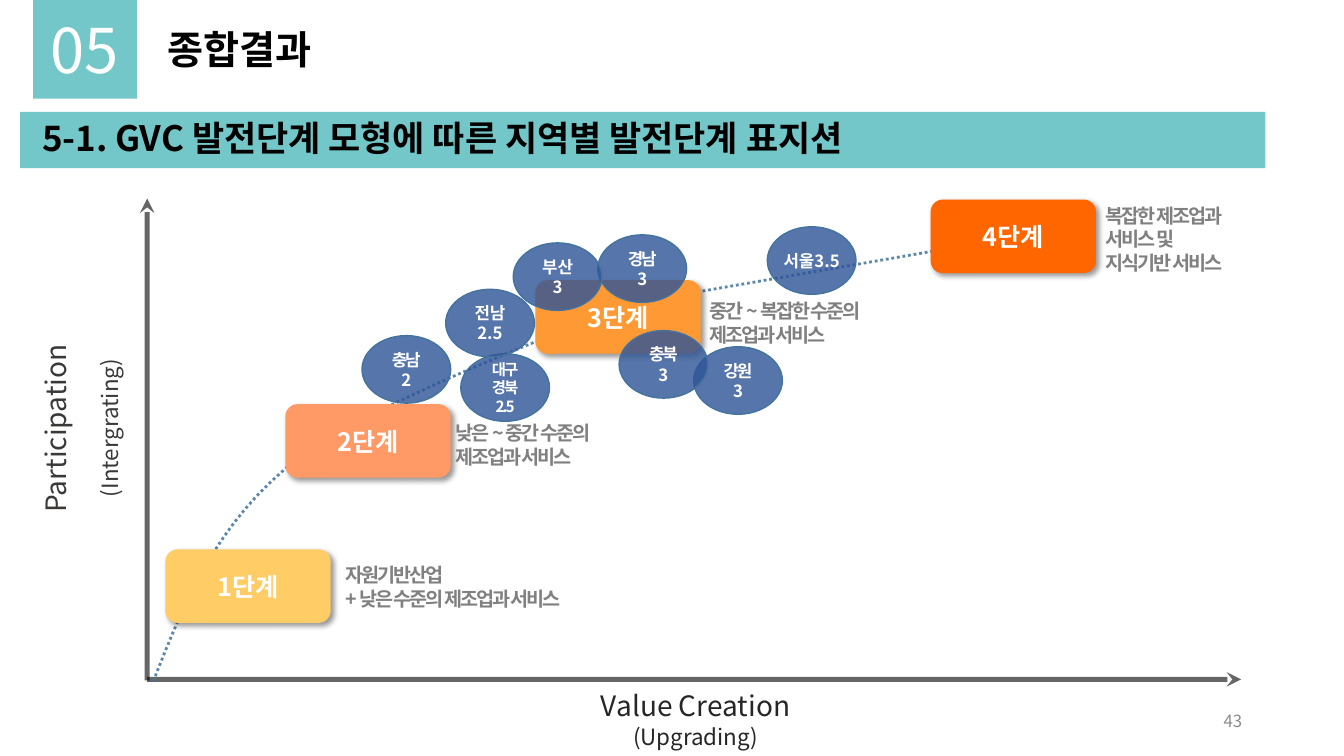
"""Build the slide that places regions on the GVC development stage curve."""
from lxml import etree
from pptx import Presentation
from pptx.dml.color import RGBColor
from pptx.enum.dml import MSO_LINE
from pptx.enum.shapes import MSO_CONNECTOR, MSO_SHAPE
from pptx.enum.text import MSO_ANCHOR, MSO_AUTO_SIZE, PP_ALIGN
from pptx.oxml.ns import qn
from pptx.util import Inches, Pt

RECT, ROUNDED, OVAL = MSO_SHAPE.RECTANGLE, MSO_SHAPE.ROUNDED_RECTANGLE, MSO_SHAPE.OVAL
STRAIGHT, DOTTED = MSO_CONNECTOR.STRAIGHT, MSO_LINE.ROUND_DOT
LEFT, CENTER, RIGHT = PP_ALIGN.LEFT, PP_ALIGN.CENTER, PP_ALIGN.RIGHT
TOP, MIDDLE = MSO_ANCHOR.TOP, MSO_ANCHOR.MIDDLE
FIT_SHAPE, FIXED = MSO_AUTO_SIZE.SHAPE_TO_FIT_TEXT, MSO_AUTO_SIZE.NONE
FONT = "Noto Sans CJK KR"
TEAL, WHITE, BLACK, GRAY = "74C7C9", "FFFFFF", "000000", "808080"
NAVY, BLUE, DARK, INK = "2F5597", "43739E", "3B3838", "262626"

AXES = [((1.46, 1.97), (1.46, 6.75)), ((12.31, 6.74), (1.46, 6.74))]
CURVE_START, CURVE_END = (1.52, 6.76), (9.9, 2.38)
CURVE_BENDS = [((1.83, 5.97), (2.14, 5.19), (2.94, 4.56)),
               ((3.74, 3.94), (6.32, 3), (6.32, 3))]
BEND_STEPS = 16
STAGE_SIZE = (1.64, 0.73)
STAGES = [("1단계", 1.64, 5.45, "FFCC66"), ("2단계", 2.83, 4.01, "FF9966"),
          ("3단계", 5.31, 2.78, "FF9933"), ("4단계", 9.23, 1.98, "FF6600")]
STAGE_NOTES = [
    (["자원기반산업", "+ 낮은 수준의 제조업과 서비스"], (3.33, 5.54, 4.79, 0.57)),
    (["낮은 ~ 중간 수준의", "제조업과 서비스"], (4.42, 4.13, 3.01, 0.57)),
    (["중간 ~ 복잡한 수준의", "제조업과 서비스"], (6.94, 2.92, 3.15, 0.57)),
    (["복잡한 제조업과", "서비스 및", "지식기반 서비스"], (10.87, 1.97, 2.48, 0.81)),
]
AXIS_LABELS = [
    ("Participation", (-2.35, 4.03, 5.8, 0.44), 20, DARK, 270),
    ("(Intergrating)", (-1.81, 4.06, 5.8, 0.37), 16, DARK, 270),
    ("Value Creation", (2.96, 6.78, 7.88, 0.44), 20, INK, 0),
    ("(Upgrading)", (2.96, 7.13, 7.88, 0.37), 16, INK, 0),
]
REGION_SIZE = (0.88, 0.67)
REGIONS = [
    (["서울3.5"], 7.61, 2.25, 12, 0),
    (["경남", "3"], 5.93, 2.33, 12, -1.5),
    (["충남", "2"], 3.59, 3.33, 12, -1.5),
    (["대구", "경북", "2.5"], 4.57, 3.51, 11, -1.5),
    (["부산", "3"], 5.09, 2.41, 12, 0),
    (["강원", "3"], 6.88, 3.44, 12, -1.5),
    (["충북", "3"], 6.14, 3.28, 12, -1.5),
    (["전남", "2.5"], 4.42, 2.87, 12, 0),
]

deck = Presentation()
deck.slide_width, deck.slide_height = Inches(13.33), Inches(7.5)
slide = deck.slides.add_slide(deck.slide_layouts[6])


def rgb(code):
    return RGBColor.from_string(code)


def add_child(parent, tag, **attributes):
    child = etree.SubElement(parent, qn(tag))
    for key, value in attributes.items():
        child.set(key, str(value))
    return child


def set_alpha(shape, percent, place):
    for color in shape._element.xpath(f"./p:spPr/{place}a:solidFill/a:srgbClr"):
        add_child(color, "a:alpha", val=percent * 1000)


def style_line(line, color, width):
    line.color.rgb = rgb(color)
    line.width = Pt(width)


def write(shape, lines, *, size, color, bold=False, spacing=0, align=LEFT,
          anchor=TOP, wrap=True, inset=None, fit=FIXED):
    frame = shape.text_frame
    frame.word_wrap, frame.vertical_anchor, frame.auto_size = wrap, anchor, fit
    if inset is not None:
        frame.margin_left = frame.margin_right = Inches(inset)
        frame.margin_top = frame.margin_bottom = Inches(inset)
    for index, line in enumerate(lines):
        paragraph = frame.add_paragraph() if index else frame.paragraphs[0]
        paragraph.alignment = align
        run = paragraph.add_run()
        run.text = line
        font = run.font
        font.name, font.size, font.bold = FONT, Pt(size), bold
        font.color.rgb = rgb(color)
        properties = run._r.get_or_add_rPr()
        if spacing:
            properties.set("spc", str(int(spacing * 100)))
        add_child(properties, "a:ea", typeface=FONT)


def add_text(lines, box, rotation=0, **text_format):
    label = slide.shapes.add_textbox(*map(Inches, box))
    label.rotation = rotation
    write(label, lines, **{"fit": FIT_SHAPE, **text_format})


def add_block(kind, box, fill):
    block = slide.shapes.add_shape(kind, *map(Inches, box))
    block.shadow.inherit = False
    block.fill.solid()
    block.fill.fore_color.rgb = rgb(fill)
    block.line.fill.background()
    return block


def add_axis(tip, origin):
    axis = slide.shapes.add_connector(STRAIGHT, *map(Inches, tip + origin))
    style_line(axis.line, BLACK, 3.5)
    set_alpha(axis, 60, "a:ln/")
    properties = axis._element.spPr
    add_child(properties.find(qn("a:ln")), "a:headEnd", type="stealth")
    add_child(properties, "a:effectLst")


def bend_points(start, first, second, end):
    for step in range(1, BEND_STEPS + 1):
        t = step / BEND_STEPS
        weights = ((1 - t) ** 3, 3 * t * (1 - t) ** 2, 3 * t * t * (1 - t), t ** 3)
        yield tuple(sum(w * p for w, p in zip(weights, values))
                    for values in zip(start, first, second, end))


def add_curve():
    points = [CURVE_START]
    for bend in CURVE_BENDS:
        points.extend(bend_points(points[-1], *bend))
    points.append(CURVE_END)
    vertices = [(Inches(x), Inches(y)) for x, y in points]
    builder = slide.shapes.build_freeform(*vertices[0])
    builder.add_line_segments(vertices[1:], close=False)
    curve = builder.convert_to_shape()
    curve.shadow.inherit = False
    curve.fill.background()
    style_line(curve.line, BLUE, 2)
    curve.line.dash_style = DOTTED
    set_alpha(curve, 85, "a:ln/")


def add_stage(name, left, top, fill):
    stage = add_block(ROUNDED, (left, top, *STAGE_SIZE), fill)
    effects = stage._element.spPr.find(qn("a:effectLst"))
    shadow = add_child(effects, "a:outerShdw", blurRad=Pt(4), dist=Pt(3),
                       dir=45 * 60000, algn="tl", rotWithShape=0)
    color = add_child(shadow, "a:srgbClr", val=BLACK)
    add_child(color, "a:alpha", val=40000)
    write(stage, [name], size=18, color=WHITE, bold=True, align=CENTER, anchor=MIDDLE)


def add_region(lines, left, top, size, spacing):
    region = add_block(OVAL, (left, top, *REGION_SIZE), NAVY)
    style_line(region.line, BLUE, 1)
    set_alpha(region, 81, "")
    write(region, lines, size=size, color=WHITE, bold=True, spacing=spacing,
          align=CENTER, anchor=MIDDLE, inset=0)


def main():
    for tip, origin in AXES:
        add_axis(tip, origin)
    add_curve()
    for stage in STAGES:
        add_stage(*stage)
    for text, box, size, color, rotation in AXIS_LABELS:
        add_text([text], box, rotation, size=size, color=color, align=CENTER)
    for lines, box in STAGE_NOTES:
        add_text(lines, box, size=14, color=GRAY, bold=True, spacing=-1.5)
    add_text(["43"], (9.42, 6.95, 3, 0.4), size=12, color="8C8C8C",
             align=RIGHT, anchor=MIDDLE, fit=FIXED)
    for region in REGIONS:
        add_region(*region)
    add_block(RECT, (0.2, 1.11, 12.35, 0.56), TEAL)
    add_text(["5-1. GVC 발전단계 모형에 따른 지역별 발전단계 표지션"],
             (0.32, 1.11, 12.23, 0.52), size=25, color=BLACK, bold=True)
    add_block(RECT, (0.33, 0, 1.03, 0.98), TEAL)
    add_text(["05"], (0.4, 0.07, 0.9, 0.84), size=44, color=WHITE, wrap=False)
    add_text(["종합결과"], (1.56, 0.2, 1.74, 0.57), size=28, color=BLACK,
             bold=True, wrap=False)
    deck.save("out.pptx")


if __name__ == "__main__":
    main()
